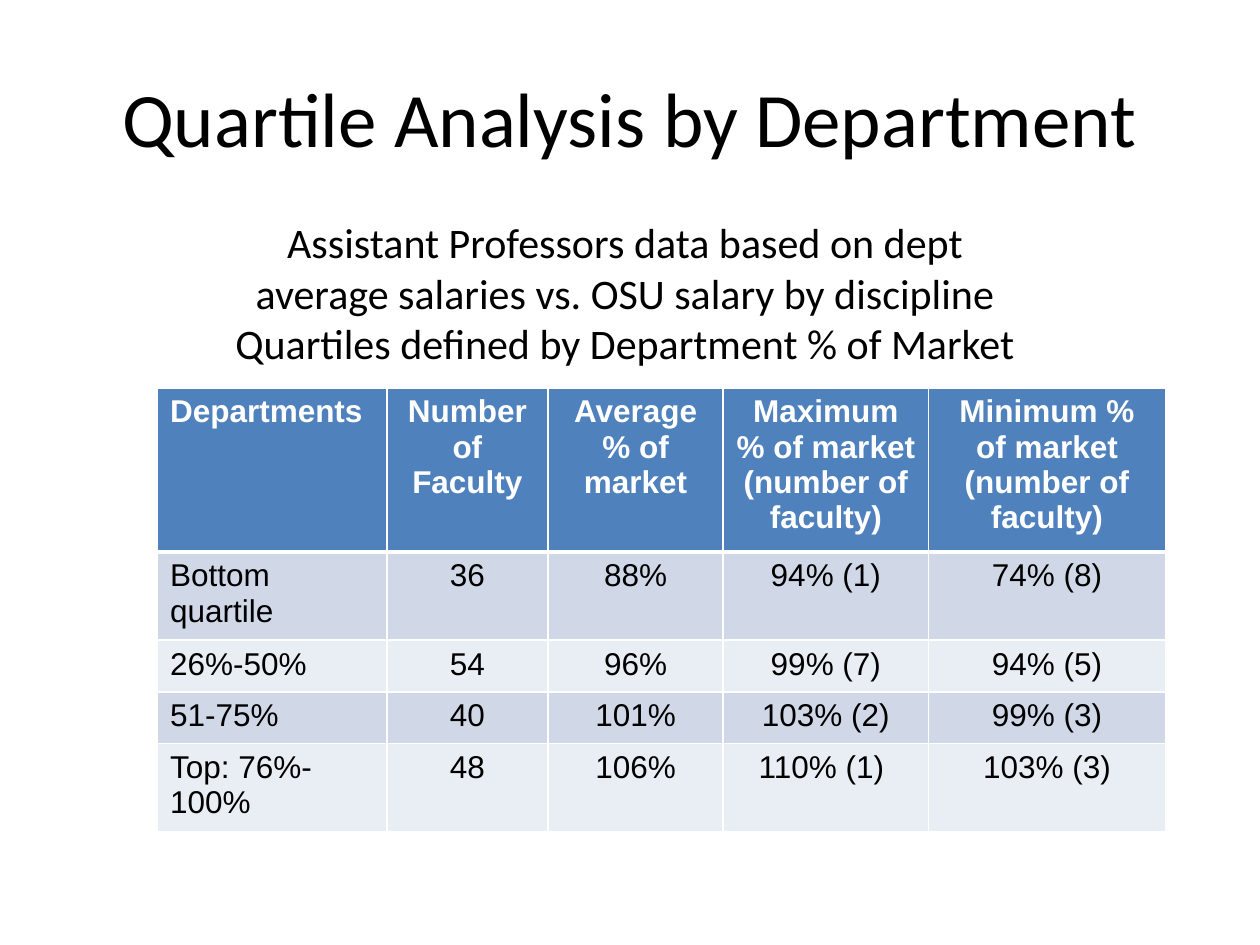
import pptx
import pptx.util
import pptx.dml.color
import pptx.enum.text
import pptx.oxml
import pptx.oxml.ns

Inches = pptx.util.Inches
Pt = pptx.util.Pt
ALIGN = pptx.enum.text.PP_ALIGN
ANCHOR = pptx.enum.text.MSO_ANCHOR

COLOURS = {"text": "000000", "white": "FFFFFF", "header": "4F81BD",
           "odd": "D0D8E8", "even": "E9EDF4"}


def write(frame, lines, size, font, colour, align, bold=False):
    """Fill a text frame with one paragraph per line."""
    frame.word_wrap = True
    for number, line in enumerate(lines):
        para = frame.paragraphs[0] if number == 0 else frame.add_paragraph()
        para.alignment = align
        span = para.add_run()
        span.text = line
        span.font.size = Pt(size)
        span.font.name = font
        span.font.bold = bold
        span.font.color.rgb = pptx.dml.color.RGBColor.from_string(COLOURS[colour])


def add_borders(cell, widths):
    """Draw white cell borders; widths maps left, right, top, bottom to points."""
    properties = cell._tc.get_or_add_tcPr()
    for place, (side, width) in enumerate(widths.items()):
        properties.insert(place, pptx.oxml.parse_xml(
            f'<a:ln{side} {pptx.oxml.ns.nsdecls("a")} w="{Pt(width)}"><a:solidFill>'
            f'<a:srgbClr val="{COLOURS["white"]}"/></a:solidFill></a:ln{side}>'))


deck = pptx.Presentation()
deck.slide_width, deck.slide_height = Inches(10), Inches(7.5)
page = deck.slides.add_slide(deck.slide_layouts[6])

# Title
title = page.shapes.add_textbox(Inches(0.5), Inches(0.3), Inches(9), Inches(1.25))
title.text_frame.vertical_anchor = ANCHOR.MIDDLE
write(title.text_frame, ["Quartile Analysis by Department"], 44, "Calibri",
      "text", ALIGN.CENTER)

# Quartile table
rows = [
    ["Departments", "Number of Faculty", "Average % of market",
     "Maximum % of market\n(number of faculty)",
     "Minimum % of market (number of faculty)"],
    ["Bottom quartile", "36", "88%", "94% (1)", "74% (8)"],
    ["26%-50%", "54", "96%", "99% (7)", "94% (5)"],
    ["51-75%", "40", "101%", "103% (2)", "99% (3)"],
    ["Top: 76%-100%", "48", "106%", "110% (1) ", "103% (3)"],
]
column_widths = [1.82, 1.28, 1.39, 1.63, 1.88]
row_heights = [1.24, 0.66, 0.41, 0.41, 0.66]
table = page.shapes.add_table(len(rows), len(column_widths), Inches(1.25), Inches(3.08),
                              Inches(8), Inches(sum(row_heights))).table
for column, width in zip(table.columns, column_widths):
    column.width = Inches(width)
for row, height in zip(table.rows, row_heights):
    row.height = Inches(height)

for row_number, texts in enumerate(rows):
    is_header = row_number == 0
    fill = "header" if is_header else "odd" if row_number % 2 else "even"
    for column_number, text in enumerate(texts):
        cell = table.cell(row_number, column_number)
        cell.fill.solid()
        cell.fill.fore_color.rgb = pptx.dml.color.RGBColor.from_string(COLOURS[fill])
        add_borders(cell, {"L": 1, "R": 1, "T": 3 if row_number == 1 else 1,
                           "B": 3 if is_header else 1})
        write(cell.text_frame, text.split("\n"), 18, "Arial",
              "white" if is_header else "text",
              ALIGN.CENTER if column_number else ALIGN.LEFT, bold=is_header)

# Explanation above the table
caption = page.shapes.add_textbox(Inches(1.75), Inches(1.67), Inches(6.42), Inches(1.62))
write(caption.text_frame,
      ["Assistant Professors data based on dept average salaries vs. OSU salary by discipline",
       "Quartiles defined by Department % of Market"],
      24, "Calibri", "text", ALIGN.CENTER)

deck.save("out.pptx")
